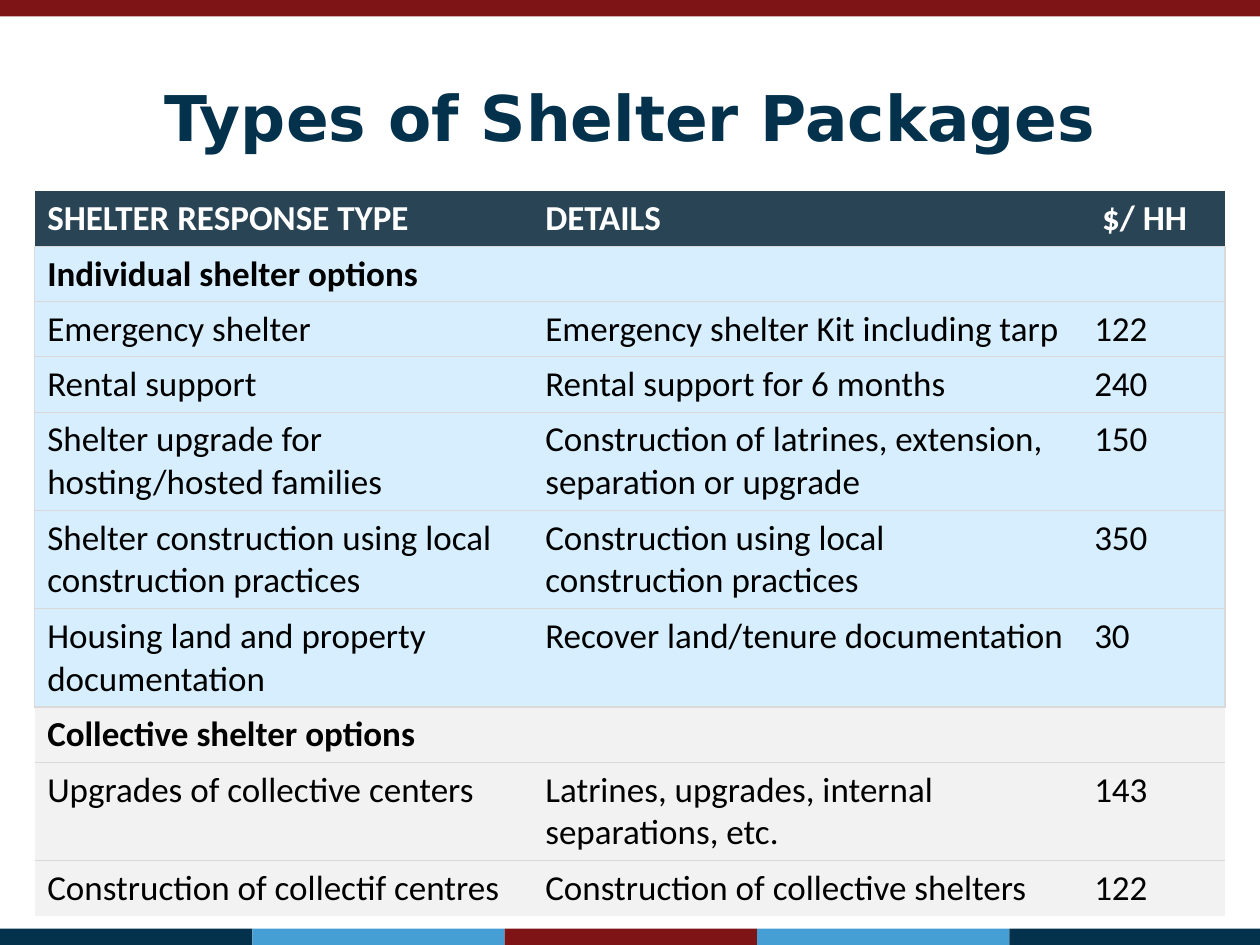
import pptx
import pptx.dml.color
import pptx.enum.shapes
import pptx.enum.text
import pptx.oxml
import pptx.oxml.ns
import pptx.util

Pt = pptx.util.Pt

THEME = {
    "navy": "04314C", "sky": "459FD5", "maroon": "7F1416",
    "header": "294454", "individual": "D6EEFD", "collective": "F2F2F2",
    "rule": "D9D9D9", "white": "FFFFFF", "black": "000000",
    "title_font": "DejaVu Sans", "title_size": 36,
    "table_font": "Calibri", "table_size": 20,
}

TITLE = "Types of Shelter Packages"
HEADINGS = ("SHELTER RESPONSE TYPE", "DETAILS", " $/ HH")
GROUPS = [
    {
        "name": "Individual shelter options", "fill": "individual", "side_width": 1,
        "options": [
            ("Emergency shelter", "Emergency shelter Kit including tarp", "122"),
            ("Rental support", "Rental support for 6 months", "240"),
            ("Shelter upgrade for hosting/hosted families",
             "Construction of latrines, extension, separation or upgrade", "150"),
            ("Shelter construction using local construction practices",
             "Construction using local construction practices", "350"),
            ("Housing land and property documentation",
             "Recover land/tenure documentation", "30"),
        ],
    },
    {
        "name": "Collective shelter options", "fill": "collective", "side_width": 0,
        "options": [
            ("Upgrades of collective centers",
             "Latrines, upgrades, internal separations, etc.", "143"),
            ("Construction of collectif centres",
             "Construction of collective shelters", "122"),
        ],
    },
]
FOOTER_COLOURS = ("navy", "sky", "maroon", "sky", "navy")

SLIDE_WIDTH, SLIDE_HEIGHT = 720, 540
BAND_HEIGHT = 9.36
FOOTER_STEP = 144.2
TABLE_LEFT, TABLE_TOP = 19.8, 109.2
COLUMN_WIDTHS = (284.6, 313.7, 81.9)
ONE_LINE, TWO_LINES = 31.6, 56.2
WRAP_LENGTH = 38


def colour(name):
    return pptx.dml.color.RGBColor.from_string(THEME[name])


def write_text(frame, text, *, font, size, fill, bold=False, align=None):
    paragraph = frame.paragraphs[0]
    paragraph.alignment = align
    run = paragraph.add_run()
    run.text = text
    run.font.name = font
    run.font.size = Pt(size)
    run.font.bold = bold
    run.font.color.rgb = colour(fill)


def add_band(slide, left, top, width, fill):
    band = slide.shapes.add_shape(
        pptx.enum.shapes.MSO_SHAPE.RECTANGLE,
        Pt(left), Pt(top), Pt(width), Pt(BAND_HEIGHT))
    band.shadow.inherit = False
    band.fill.solid()
    band.fill.fore_color.rgb = colour(fill)
    band.line.fill.background()


def set_borders(cell, widths):
    """Draw the left, right, top and bottom rules; a width of 0 hides one."""
    properties = cell._tc.get_or_add_tcPr()
    for side, width in zip("LRTB", widths):
        paint = (f'<a:solidFill><a:srgbClr val="{THEME["rule"]}"/></a:solidFill>'
                 if width else "<a:noFill/>")
        properties.append(pptx.oxml.parse_xml(
            f'<a:ln{side} {pptx.oxml.ns.nsdecls("a")} w="{int(Pt(width))}">'
            f"{paint}</a:ln{side}>"))


def table_rows():
    """Flatten the groups into rows of texts and their format."""
    rows = [{"texts": HEADINGS, "fill": "header", "ink": "white",
             "bold": True, "side": 0, "bottom": 1}]
    for group in GROUPS:
        shared = {"fill": group["fill"], "ink": "black", "side": group["side_width"]}
        rows.append({"texts": (group["name"], "", ""), "bold": True,
                     "bottom": 0.75, **shared})
        for option in group["options"]:
            rows.append({"texts": option, "bold": False, "bottom": 0.75, **shared})
        rows[-1]["bottom"] = 1
    rows[-1]["bottom"] = 0
    return rows


def add_package_table(slide):
    rows = table_rows()
    heights = [TWO_LINES if max(map(len, row["texts"])) > WRAP_LENGTH else ONE_LINE
               for row in rows]
    table = slide.shapes.add_table(
        len(rows), len(COLUMN_WIDTHS), Pt(TABLE_LEFT), Pt(TABLE_TOP),
        Pt(sum(COLUMN_WIDTHS)), Pt(sum(heights))).table
    table.horz_banding = False
    for column, width in zip(table.columns, COLUMN_WIDTHS):
        column.width = Pt(width)

    top = 0
    last_column = len(COLUMN_WIDTHS) - 1
    for row_index, (row, height) in enumerate(zip(rows, heights)):
        table.rows[row_index].height = Pt(height)
        for column_index, text in enumerate(row["texts"]):
            cell = table.cell(row_index, column_index)
            left = row["side"] if column_index == 0 else 0
            right = row["side"] if column_index == last_column else 0
            set_borders(cell, (left, right, top, row["bottom"]))
            cell.fill.solid()
            cell.fill.fore_color.rgb = colour(row["fill"])
            write_text(cell.text_frame, text, font=THEME["table_font"],
                       size=THEME["table_size"], fill=row["ink"], bold=row["bold"])
        top = row["bottom"]


def add_title(slide):
    frame = slide.shapes.add_textbox(Pt(36), Pt(21.6), Pt(648), Pt(90)).text_frame
    frame.word_wrap = True
    frame.vertical_anchor = pptx.enum.text.MSO_ANCHOR.MIDDLE
    write_text(frame, TITLE, font=THEME["title_font"], size=THEME["title_size"],
               fill="navy", bold=True, align=pptx.enum.text.PP_ALIGN.CENTER)


def main():
    presentation = pptx.Presentation()
    presentation.slide_width = Pt(SLIDE_WIDTH)
    presentation.slide_height = Pt(SLIDE_HEIGHT)
    slide = presentation.slides.add_slide(presentation.slide_layouts[6])

    add_band(slide, 0, 0, SLIDE_WIDTH, "maroon")
    for index, fill in enumerate(FOOTER_COLOURS):
        left = index * FOOTER_STEP
        add_band(slide, left, SLIDE_HEIGHT - BAND_HEIGHT,
                 min(FOOTER_STEP, SLIDE_WIDTH - left), fill)
    add_title(slide)
    add_package_table(slide)
    presentation.save("out.pptx")


if __name__ == "__main__":
    main()
